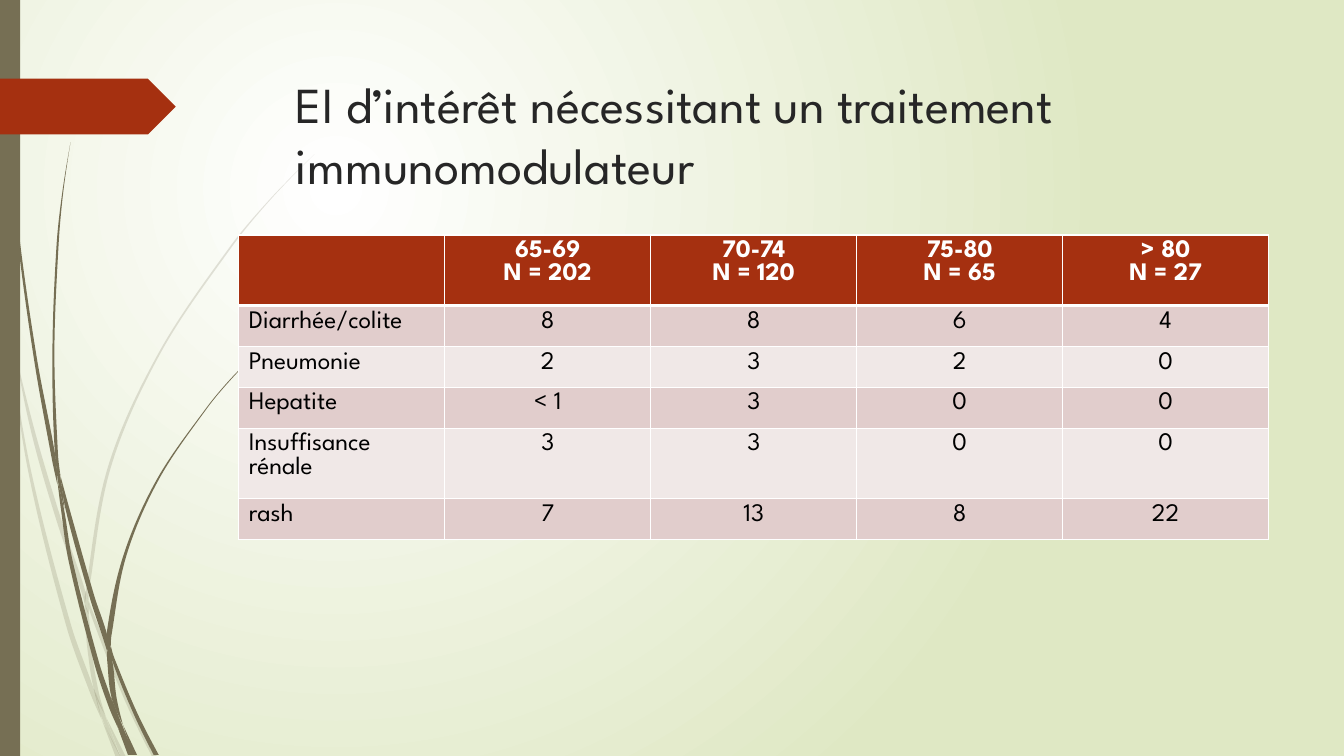
import pptx
import pptx.dml.color
import pptx.enum.shapes
import pptx.enum.text
import pptx.oxml
import pptx.oxml.ns
import pptx.util

Cm = pptx.util.Cm
qn = pptx.oxml.ns.qn
NS = pptx.oxml.ns.nsdecls("a")

TITLE = "EI d’intérêt nécessitant un traitement immunomodulateur"
HEADER = ["", "65-69\nN = 202", "70-74\nN = 120", "75-80\nN = 65", "> 80\nN = 27"]
ROWS = [
    ["Diarrhée/colite", "8", "8", "6", "4"],
    ["Pneumonie", "2", "3", "2", "0"],
    ["Hepatite", "< 1", "3", "0", "0"],
    ["Insuffisance rénale", "3", "3", "0", "0"],
    ["rash", "7", "13", "8", "22"],
]
THEME = {
    "font": "League Spartan", "title_size": 36, "table_size": 18,
    "title": "262626", "text": "000000", "white": "FFFFFF",
    "accent": "A53010", "stem": "766F54", "glow": "DFE8C4",
    "bands": ["E1CDCC", "F0E8E7"], "faint": 20,
}
STRAND_UNIT = 2.54
FAINT_STRANDS = [
    [(0, 2.82, 0), (0.05, 3.13, 0.03), (0.11, 3.5, 0)],
    [(0.14, 3.45, 0), (0.34, 4.33, 0.04), (0.6, 5.21, 0.05), (0.83, 5.88, 0.04),
     (0.84, 5.99, 0)],
    [(0.88, 5.96, 0), (0.91, 6.08, 0.03), (1.25, 6.93, 0.04), (1.53, 7.5, 0.05)],
    [(1.05, 7.11, 0), (1.22, 7.5, 0.05)],
    [(0.11, 3.5, 0), (0.3, 4.7, 0.03), (0.68, 6.2, 0.05), (0.91, 6.85, 0.05),
     (1.01, 7.14, 0)],
    [(0.84, 5.99, 0), (0.86, 6.1, 0.04), (0.89, 6.46, 0.04), (0.96, 6.87, 0.04),
     (1.05, 7.11, 0)],
    [(3.12, 1.53, 0), (2.68, 1.98, 0.01), (2.29, 2.45, 0.02), (1.59, 3.49, 0.02),
     (1.09, 4.62, 0.03), (0.87, 5.84, 0.03), (0.88, 5.96, 0)],
    [(1.01, 7.14, 0), (1.17, 7.5, 0.05)],
    [(0.85, 5.86, 0), (0.86, 5.98, 0.04), (0.88, 6.1, 0)],
    [(0.93, 6.83, 0), (1.03, 7.12, 0.04), (1.19, 7.5, 0)],
]
DARK_STRANDS = [
    [(0.04, 0, 0.01), (0.07, 1.1, 0.01), (0.18, 2.33, 0.02), (0.35, 3.55, 0.03),
     (0.53, 4.53, 0.04), (0.57, 4.81, 0)],
    [(0.6, 4.72, 0), (0.67, 5.05, 0.04), (0.91, 5.91, 0.05), (1.04, 6.31, 0.05),
     (1.06, 6.45, 0)],
    [(1.1, 6.41, 0), (1.12, 6.53, 0.03), (1.34, 7.07, 0.04), (1.55, 7.49, 0.05)],
    [(0.57, 4.77, 0), (0.62, 5.05, 0.03), (0.7, 5.56, 0.04), (0.96, 6.58, 0.05),
     (1.1, 7, 0.05), (1.17, 7.22, 0)],
    [(0.7, 1.41, 0), (0.62, 1.93, 0.01), (0.57, 2.45, 0.02), (0.53, 3.49, 0.02),
     (0.56, 4.5, 0.03), (0.6, 4.72, 0)],
    [(1.22, 7.19, 0), (1.34, 7.49, 0.04)],
    [(0.55, 4.49, 0), (0.59, 4.77, 0.03), (0.64, 5.05, 0)],
    [(2.61, 3.44, 0), (2.31, 3.74, 0.01), (2.05, 4.05, 0.01), (1.57, 4.75, 0.02),
     (1.24, 5.51, 0.03), (1.08, 6.31, 0.05), (1.1, 6.41, 0)],
    [(1.17, 7.22, 0), (1.29, 7.49, 0.04)],
    [(1.06, 6.45, 0), (1.09, 6.56, 0.05), (1.13, 6.91, 0.05), (1.22, 7.19, 0)],
    [(1.06, 6.31, 0), (1.08, 6.43, 0.04), (1.11, 6.56, 0)],
    [(1.1, 6.91, 0), (1.19, 7.2, 0.05), (1.32, 7.49, 0.03)],
]


def rgb(name):
    return pptx.dml.color.RGBColor.from_string(THEME.get(name, name))


def paint(sp, color):
    sp.shadow.inherit = False
    sp.fill.solid()
    sp.fill.fore_color.rgb = rgb(color)
    sp.line.fill.background()


def style(font, size, color, bold=False):
    font.name = THEME["font"]
    font.size = pptx.util.Pt(THEME[size])
    font.color.rgb = rgb(color)
    font.bold = bold


def edge_curves(edge):
    secants = [(b[0] - a[0]) / (b[1] - a[1]) for a, b in zip(edge, edge[1:])]
    inner = [(b[0] - a[0]) / (b[1] - a[1]) for a, b in zip(edge, edge[2:])]
    slopes = secants * 2
    if inner:
        first = 1.5 * secants[0] - 0.5 * inner[0]
        final = 1.5 * secants[-1] - 0.5 * inner[-1]
        slopes = [first] + inner + [final]
    curves = []
    for i, ((x0, y0), (x1, y1)) in enumerate(zip(edge, edge[1:])):
        h = (y1 - y0) / 3
        curves.append([(x0 + slopes[i] * h, y0 + h),
                       (x1 - slopes[i + 1] * h, y1 - h), (x1, y1)])
    return curves


def add_strand(s, points, alpha=None):
    left = [(Cm((x - w / 2) * STRAND_UNIT), Cm(y * STRAND_UNIT)) for x, y, w in points]
    right = [(Cm((x + w / 2) * STRAND_UNIT), Cm(y * STRAND_UNIT)) for x, y, w in points]
    right.reverse()
    builder = s.shapes.build_freeform(*left[0])
    builder.add_line_segments(left[1:] + right, close=True)
    sp = builder.convert_to_shape()
    paint(sp, "stem")
    lines = list(sp._element.iter(qn("a:lnTo")))
    sides = lines[:len(left) - 1] + lines[len(left):len(left) * 2 - 1]
    for line, curve in zip(sides, edge_curves(left) + edge_curves(right)):
        pts = "".join(f'<a:pt x="{round(x - sp.left)}" y="{round(y - sp.top)}"/>'
                      for x, y in curve)
        bezier = pptx.oxml.parse_xml(f"<a:cubicBezTo {NS}>{pts}</a:cubicBezTo>")
        line.getparent().replace(line, bezier)
    if alpha:
        color = sp._element.spPr.find(qn("a:solidFill"))[0]
        color.append(pptx.oxml.parse_xml(f'<a:alpha {NS} val="{alpha * 1000}"/>'))


def set_background(s):
    fill = s.background.fill
    fill.gradient()
    for stop, color, position in zip(fill.gradient_stops, ("white", "glow"), (0, 1)):
        stop.color.rgb = rgb(color)
        stop.position = position
    grad = s._element.find(".//" + qn("a:gradFill"))
    grad.remove(grad.find(qn("a:lin")))
    grad.append(pptx.oxml.parse_xml(
        f'<a:path {NS} path="circle">'
        '<a:fillToRect l="50000" t="50000" r="100000" b="100000"/></a:path>'))


def add_borders(cell, is_header, below_header):
    tc_pr = cell._tc.get_or_add_tcPr()
    thick = {"T": below_header, "B": is_header}
    for i, side in enumerate("LRTB"):
        width = pptx.util.Pt(3 if thick.get(side) else 1)
        tc_pr.insert(i, pptx.oxml.parse_xml(
            f'<a:ln{side} {NS} w="{width}"><a:solidFill>'
            f'<a:srgbClr val="{THEME["white"]}"/></a:solidFill></a:ln{side}>'))


def add_results(s):
    grid = [HEADER] + ROWS
    row_height, col_width = Cm(1.03), Cm(5.19)
    table = s.shapes.add_table(len(grid), len(HEADER), Cm(6.02), Cm(5.92),
                               col_width * len(HEADER), row_height * len(grid)).table
    for col in table.columns:
        col.width = col_width
    for i, row in enumerate(grid):
        table.rows[i].height = row_height
        for j, text in enumerate(row):
            cell = table.cell(i, j)
            cell.text = text
            cell.fill.solid()
            cell.fill.fore_color.rgb = rgb(THEME["bands"][(i - 1) % 2] if i else "accent")
            add_borders(cell, i == 0, i == 1)
            for p in cell.text_frame.paragraphs:
                for r in p.runs:
                    style(r.font, "table_size", "text" if i else "white", i == 0)
                if j:
                    p.alignment = pptx.enum.text.PP_ALIGN.CENTER


def add_title(s):
    tf = s.shapes.add_textbox(Cm(7.21), Cm(1.73), Cm(24.77), Cm(3.56)).text_frame
    tf.word_wrap = True
    tf.vertical_anchor = pptx.enum.text.MSO_ANCHOR.TOP
    p = tf.paragraphs[0]
    p.text = TITLE
    style(p.font, "title_size", "title")


def main():
    prs = pptx.Presentation()
    prs.slide_width, prs.slide_height = Cm(33.87), Cm(19.05)
    s = prs.slides.add_slide(prs.slide_layouts[6])
    set_background(s)
    for points in FAINT_STRANDS:
        add_strand(s, points, THEME["faint"])
    for points in DARK_STRANDS:
        add_strand(s, points)
    kinds = pptx.enum.shapes.MSO_SHAPE
    bar = s.shapes.add_shape(kinds.RECTANGLE, 0, 0, Cm(0.51), prs.slide_height)
    paint(bar, "stem")
    arrow = s.shapes.add_shape(kinds.PENTAGON, 0, Cm(1.98), Cm(4.43), Cm(1.41))
    paint(arrow, "accent")
    add_title(s)
    add_results(s)
    prs.save("out.pptx")


if __name__ == "__main__":
    main()
